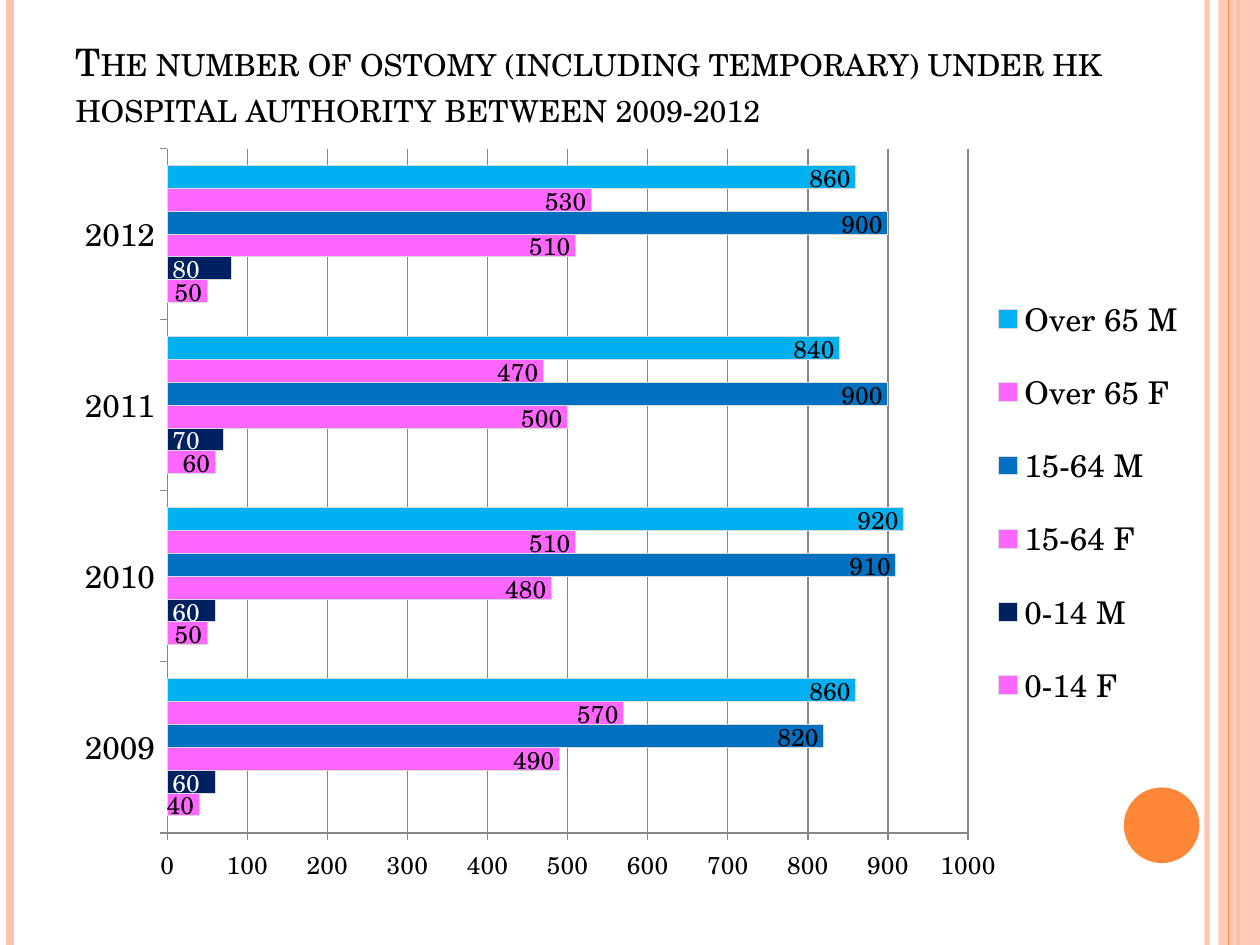
from lxml.etree import SubElement
from pptx import Presentation
from pptx.chart.data import CategoryChartData
from pptx.dml.color import RGBColor
from pptx.enum.chart import XL_CHART_TYPE as ChartType, XL_LABEL_POSITION as LabelPosition
from pptx.enum.chart import XL_LEGEND_POSITION as LegendPosition, XL_TICK_MARK as TickMark
from pptx.enum.shapes import MSO_CONNECTOR as Connector, MSO_SHAPE as Shape
from pptx.enum.text import MSO_ANCHOR as Anchor, PP_ALIGN as Align
from pptx.oxml import parse_xml
from pptx.oxml.ns import nsdecls, qn
from pptx.util import Inches, Pt

WIDTH, HEIGHT = 10, 7.5
FONT = "TeX Gyre Schola"
COLORS = {
    "peach": "FEC3AE", "orange": "FE8637", "black": "000000", "white": "FFFFFF",
    "pink": "FF66FF", "navy": "002060", "blue": "0070C0", "sky": "00B0F0",
    "grid": "868686", "outline": "D9D9D9",
}
YEARS = ["2009", "2010", "2011", "2012"]
# name, values, fill, label colour, label position
SERIES = [
    ("0-14 F", (40, 50, 60, 50), "pink", "black", LabelPosition.INSIDE_END),
    ("0-14 M", (60, 60, 70, 80), "navy", "white", LabelPosition.INSIDE_BASE),
    ("15-64 F", (490, 480, 500, 510), "pink", "black", LabelPosition.INSIDE_END),
    ("15-64 M", (820, 910, 900, 900), "blue", "black", LabelPosition.INSIDE_END),
    ("Over 65 F", (570, 510, 470, 530), "pink", "black", LabelPosition.INSIDE_END),
    ("Over 65 M", (860, 920, 840, 860), "sky", "black", LabelPosition.INSIDE_END),
]


def rgb(name):
    return RGBColor.from_string(COLORS[name])


def set_font(font, size, color="black"):
    font.name, font.size, font.bold = FONT, Pt(size), False
    font.color.rgb = rgb(color)


def set_opacity(shape, percent):
    color = next(shape.element.spPr.iter(qn("a:srgbClr")))
    SubElement(color, qn("a:alpha"), val=str(percent * 1000))


def add_stripe(slide, x, color, width):
    stripe = slide.shapes.add_connector(
        Connector.STRAIGHT, Inches(x), 0, Inches(x), Inches(HEIGHT))
    stripe.line.color.rgb = rgb(color)
    stripe.line.width = Pt(width)
    SubElement(stripe.element.spPr, qn("a:effectLst"))
    return stripe


def add_solid(slide, kind, box, color):
    shape = slide.shapes.add_shape(kind, *map(Inches, box))
    shape.shadow.inherit = False
    shape.fill.solid()
    shape.fill.fore_color.rgb = rgb(color)
    shape.line.fill.background()
    return shape


def set_layout(element, box, inner=False):
    """Place a chart part by shares of the chart's size."""
    layout = element.find(qn("c:layout"))
    if layout is not None:
        element.remove(layout)
    target = '<c:layoutTarget val="inner"/>' if inner else ""
    modes = '<c:xMode val="edge"/><c:yMode val="edge"/>'
    sizes = "".join(f'<c:{key} val="{share}"/>' for key, share in zip("xywh", box))
    layout = parse_xml(f'<c:layout {nsdecls("c")}><c:manualLayout>{target}{modes}{sizes}'
                       "</c:manualLayout></c:layout>")
    element.insert(0 if inner else 1, layout)


def style_axis(axis, size):
    axis.major_tick_mark, axis.minor_tick_mark = TickMark.OUTSIDE, TickMark.NONE
    axis.format.line.color.rgb = rgb("grid")
    set_font(axis.tick_labels.font, size)


def style_series(series, fill, label_color, position):
    series.format.fill.solid()
    series.format.fill.fore_color.rgb = rgb(fill)
    series.format.line.color.rgb = rgb("outline")
    labels = series.data_labels
    labels.show_value = True
    labels.position = position
    set_font(labels.font, 14, label_color)


def add_ostomy_chart(slide, box):
    data = CategoryChartData()
    data.categories = YEARS
    for name, values, *_ in SERIES:
        data.add_series(name, values)
    chart = slide.shapes.add_chart(ChartType.BAR_CLUSTERED, *map(Inches, box), data).chart
    set_font(chart.font, 18)
    chart.has_title = False

    # Bars
    plot = chart.plots[0]
    plot.gap_width, plot.overlap, plot.vary_by_categories = 150, 0, False
    for series, (_, _, *look) in zip(plot.series, SERIES):
        style_series(series, *look)

    # Axes
    style_axis(chart.category_axis, 18)
    values_axis = chart.value_axis
    style_axis(values_axis, 14)
    values_axis.minimum_scale, values_axis.maximum_scale = 0, 1000
    values_axis.major_unit = 100
    values_axis.major_gridlines.format.line.color.rgb = rgb("grid")

    # Legend and plot area
    chart.has_legend = True
    chart.legend.position = LegendPosition.RIGHT
    chart.legend.include_in_layout = False
    set_font(chart.legend.font, 18)
    plot_area = chart.element.chart.plotArea
    set_layout(plot_area, (0.1, 0.03, 0.7, 0.91), inner=True)
    set_layout(chart.legend._element, (0.81, 0.19, 0.19, 0.62))


def set_title(slide, text, box):
    title = slide.shapes.title
    title.left, title.top, title.width, title.height = map(Inches, box)
    frame = title.text_frame
    frame.text = text
    frame.word_wrap = True
    frame.vertical_anchor = Anchor.BOTTOM
    paragraph = frame.paragraphs[0]
    paragraph.alignment = Align.LEFT
    set_font(paragraph.font, 21.6)
    paragraph.runs[0].font._element.set("cap", "small")
    slide.shapes._spTree.append(title.element)  # in front of the chart


def main():
    presentation = Presentation()
    presentation.slide_width, presentation.slide_height = Inches(WIDTH), Inches(HEIGHT)
    slide = presentation.slides.add_slide(presentation.slide_layouts[5])

    # Edge decoration
    set_opacity(add_stripe(slide, 9.58, "peach", 3), 93)
    add_stripe(slide, 0.08, "peach", 4.5)
    add_stripe(slide, 9.83, "orange", 1.5)
    band = add_solid(slide, Shape.RECTANGLE, (9.67, 0, 0.33, HEIGHT), "peach")
    set_opacity(band, 87)
    add_stripe(slide, 9.75, "orange", 0.75)
    add_solid(slide, Shape.OVAL, (8.92, 6.25, 0.6, 0.6), "orange")

    # Content
    add_ostomy_chart(slide, (0.42, 1, 9.08, 6))
    set_title(slide, "The number of ostomy (including temporary) under hk "
              "hospital authority between 2009-2012", (0.5, 0.33, 9, 0.75))
    presentation.save("out.pptx")


if __name__ == "__main__":
    main()
